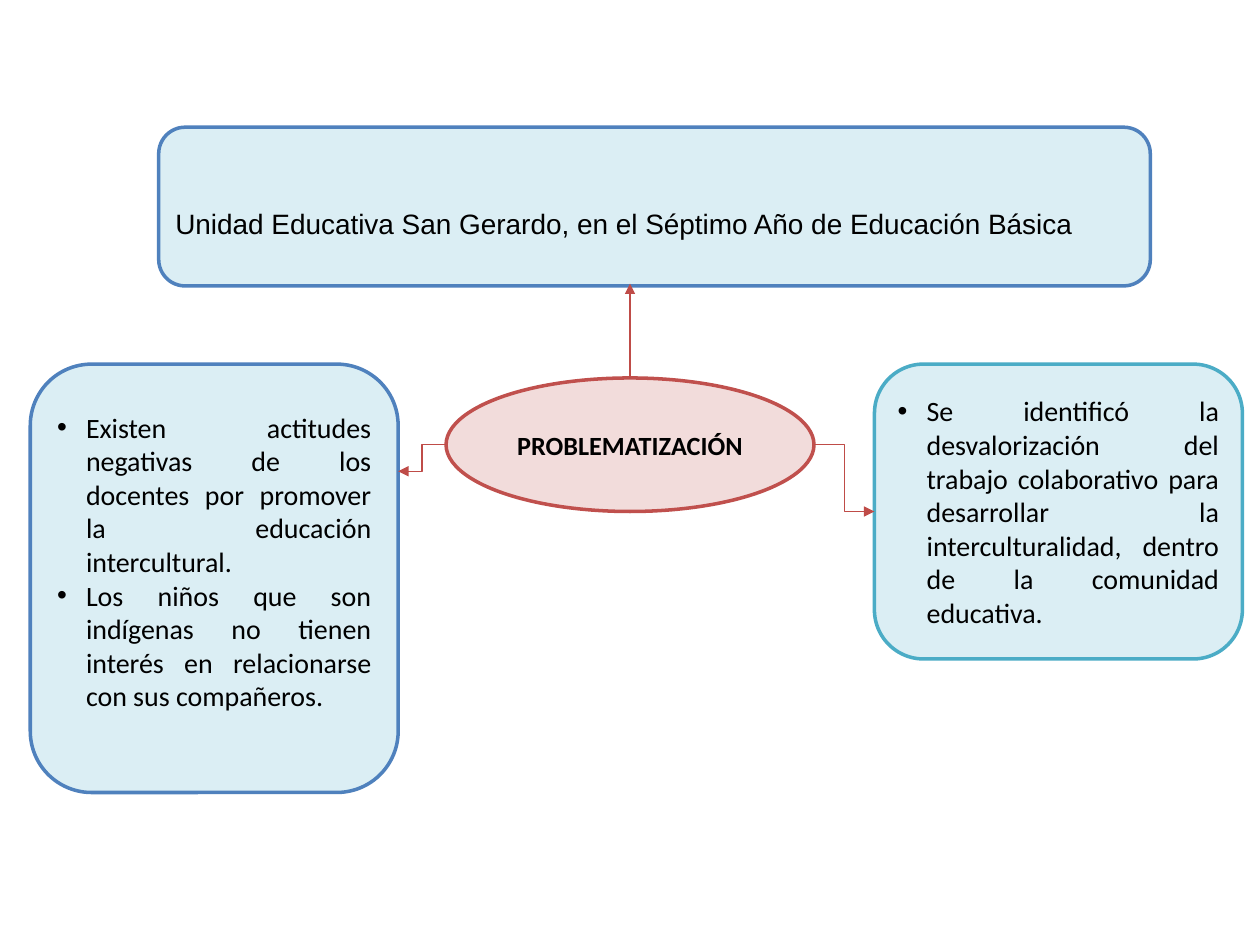
import lxml.etree
import pptx
import pptx.dml.color
import pptx.enum.shapes
import pptx.enum.text
import pptx.oxml.ns
import pptx.util

Inches = pptx.util.Inches
SHAPE = pptx.enum.shapes.MSO_SHAPE
CONNECTOR = pptx.enum.shapes.MSO_CONNECTOR
ALIGN = pptx.enum.text.PP_ALIGN
qn = pptx.oxml.ns.qn

THEME = {
    "pale_blue": "DBEEF4", "pale_red": "F2DCDB",
    "blue": "4F81BD", "teal": "4BACC6", "red": "C0504D",
    "arrow": "BF4C48", "text": "000000",
    "center_size": 15, "body_size": 16,
    "outline": 2, "arrow_width": 0.75,
}


def color(name):
    return pptx.dml.color.RGBColor.from_string(THEME[name])


presentation = pptx.Presentation()
presentation.slide_width, presentation.slide_height = Inches(10), Inches(7.5)
slide = presentation.slides.add_slide(presentation.slide_layouts[6])

# extra_top and extra_bottom shift the vertically centred text.
boxes = {
    "problem": dict(
        kind=SHAPE.OVAL, at=(3.54, 3, 2.92, 1.06), fill="pale_red", line="red",
        align=ALIGN.CENTER, font=dict(name="Calibri", size="center_size", bold=True),
        lines=["PROBLEMATIZACIÓN"]),
    "school": dict(
        at=(1.26, 1.01, 7.87, 1.26), line="blue", extra_top=0.26,
        font=dict(name="Arial", size="body_size", bold=False),
        lines=["Unidad Educativa San Gerardo, en el Séptimo Año de Educación Básica"]),
    "collaboration": dict(
        at=(6.94, 2.89, 2.92, 2.34), line="teal", bullets=True,
        lines=["Se identificó la desvalorización del trabajo colaborativo para "
               "desarrollar la interculturalidad, dentro de la comunidad educativa."]),
    "attitudes": dict(
        at=(0.24, 2.89, 2.92, 3.4), line="blue", bullets=True, extra_bottom=0.27,
        lines=["Existen actitudes negativas de los docentes por promover la "
               "educación intercultural.",
               "Los niños que son indígenas no tienen interés en relacionarse "
               "con sus compañeros."]),
}
body_font = dict(name="Calibri", size="body_size", bold=False)

shapes = {}
for name, box in boxes.items():
    shape = slide.shapes.add_shape(
        box.get("kind", SHAPE.ROUNDED_RECTANGLE), *map(Inches, box["at"]))
    shapes[name] = shape
    shape.shadow.inherit = False
    shape.fill.solid()
    shape.fill.fore_color.rgb = color(box.get("fill", "pale_blue"))
    shape.line.color.rgb = color(box["line"])
    shape.line.width = pptx.util.Pt(THEME["outline"])

    frame = shape.text_frame
    frame_format = {
        "word_wrap": True,
        "vertical_anchor": pptx.enum.text.MSO_ANCHOR.MIDDLE,
        "margin_left": Inches(0.07), "margin_right": Inches(0.07),
        "margin_top": Inches(0.04 + box.get("extra_top", 0)),
        "margin_bottom": Inches(0.04 + box.get("extra_bottom", 0)),
    }
    for attribute, value in frame_format.items():
        setattr(frame, attribute, value)

    for index, line in enumerate(box["lines"]):
        paragraph = frame.paragraphs[0] if index == 0 else frame.add_paragraph()
        paragraph.text = line
        paragraph.alignment = box.get("align", ALIGN.JUSTIFY)
        if box.get("bullets"):
            properties = paragraph._p.get_or_add_pPr()
            properties.set("marL", str(Inches(0.23)))
            properties.set("indent", str(Inches(-0.23)))
            lxml.etree.SubElement(properties, qn("a:buFont"), typeface="Arial")
            lxml.etree.SubElement(properties, qn("a:buChar"), char="•")
        font_format = dict(box.get("font", body_font))
        font_format["size"] = pptx.util.Pt(THEME[font_format["size"]])
        for attribute, value in font_format.items():
            setattr(paragraph.font, attribute, value)
        paragraph.font.color.rgb = color("text")

arrows = {
    "collaboration": (CONNECTOR.ELBOW, 6.46, 3.53, 6.94, 4.06),
    "attitudes": (CONNECTOR.ELBOW, 3.54, 3.53, 3.16, 3.74),
    "school": (CONNECTOR.STRAIGHT, 5, 3, 5, 2.25),
}
for target, (kind, *ends) in arrows.items():
    arrow = slide.shapes.add_connector(kind, *map(Inches, ends))
    arrow.line.color.rgb = color("arrow")
    arrow.line.width = pptx.util.Pt(THEME["arrow_width"])
    lxml.etree.SubElement(arrow.line._get_or_add_ln(), qn("a:tailEnd"), type="triangle")
    lxml.etree.SubElement(arrow._element.spPr, qn("a:effectLst"))
    if target == "school":
        arrow.begin_connect(shapes["problem"], 0)

presentation.save("out.pptx")
